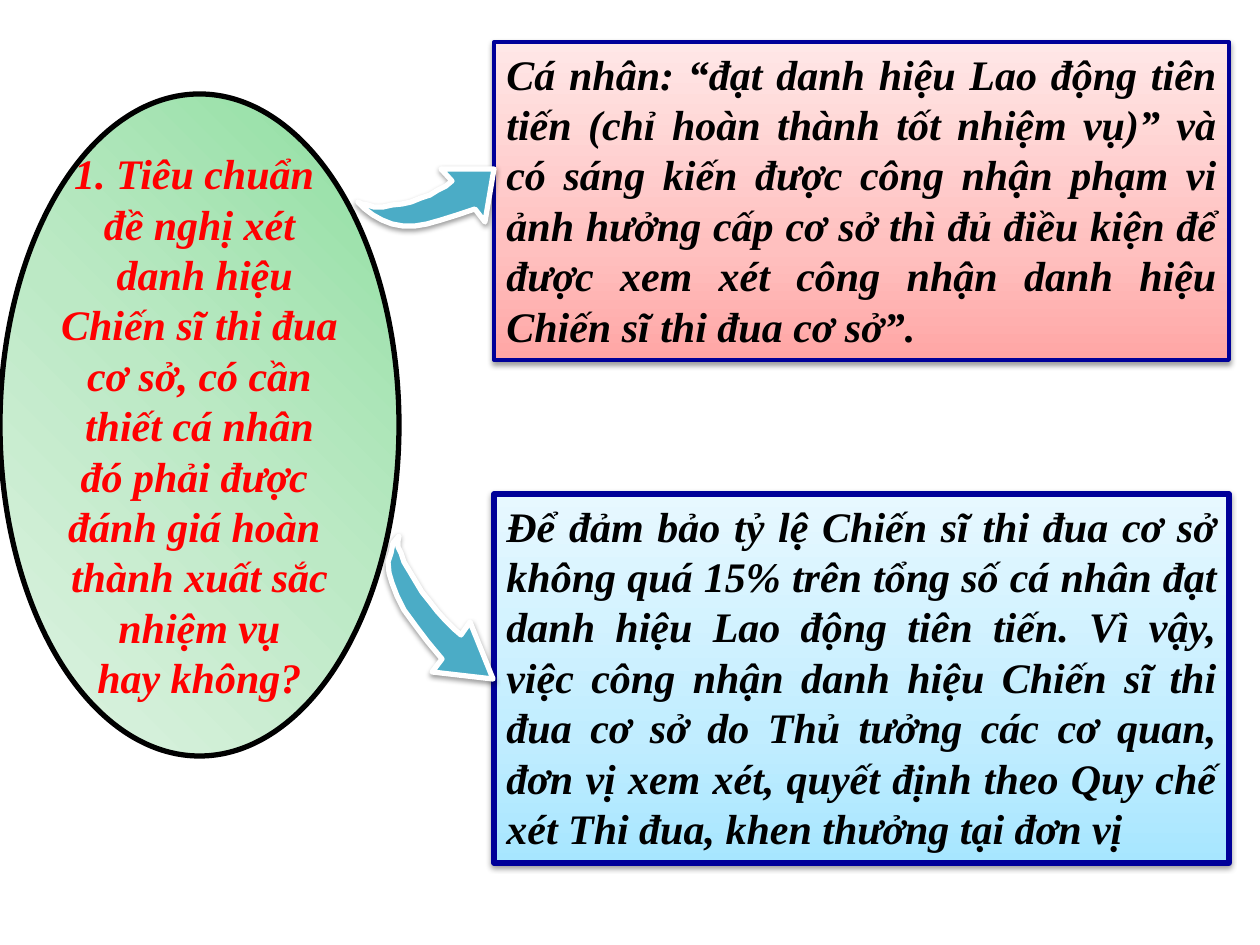
"""Build the slide on the criteria for the grassroots emulation title."""
from lxml import etree
from pptx import Presentation
from pptx.dml.color import RGBColor
from pptx.enum.shapes import MSO_SHAPE
from pptx.enum.text import MSO_ANCHOR, MSO_AUTO_SIZE, PP_ALIGN
from pptx.oxml.ns import qn
from pptx.util import Inches, Pt

PX = 914400 / 126
FONT = "Times New Roman"
OVAL, RECT = MSO_SHAPE.OVAL, MSO_SHAPE.RECTANGLE
TOP, MIDDLE = MSO_ANCHOR.TOP, MSO_ANCHOR.MIDDLE
CENTER, JUSTIFY = PP_ALIGN.CENTER, PP_ALIGN.JUSTIFY
RESIZE = MSO_AUTO_SIZE.SHAPE_TO_FIT_TEXT

BLACK = RGBColor(0x00, 0x00, 0x00)
WHITE = RGBColor(0xFF, 0xFF, 0xFF)
RED = RGBColor(0xFF, 0x00, 0x00)
NAVY = RGBColor(0x00, 0x00, 0x99)
TEAL = RGBColor(0x4B, 0xAC, 0xC6)
GREENS = [(0, RGBColor(0x8F, 0xDE, 0xA0)), (50, RGBColor(0xBC, 0xE9, 0xC5)),
          (100, RGBColor(0xDF, 0xF3, 0xE3))]
PINKS = [(0, RGBColor(0xFF, 0xA6, 0xA5)), (35, RGBColor(0xFF, 0xC0, 0xBF)),
         (100, RGBColor(0xFF, 0xE7, 0xE7))]
BLUES = [(0, RGBColor(0xA7, 0xE6, 0xFF)), (35, RGBColor(0xC1, 0xED, 0xFF)),
         (100, RGBColor(0xE7, 0xF8, 0xFF))]

QUESTION = ["1. Tiêu chuẩn ", "đề nghị xét", " danh hiệu", " Chiến sĩ thi đua ",
            "cơ sở, có cần", " thiết cá nhân ", "đó phải được ",
            "đánh giá hoàn ", "thành xuất sắc", " nhiệm vụ ", "hay không?"]
PERSONAL = ("Cá nhân: “đạt danh hiệu Lao động tiên tiến (chỉ hoàn thành tốt "
            "nhiệm vụ)” và có sáng kiến được công nhận phạm vi ảnh hưởng cấp "
            "cơ sở thì đủ điều kiện để được xem xét công nhận danh hiệu "
            "Chiến sĩ thi đua cơ sở”.")
RATIO = ("Để đảm bảo tỷ lệ Chiến sĩ thi đua cơ sở không quá 15% trên tổng số "
         "cá nhân đạt danh hiệu Lao động tiên tiến. Vì vậy, việc công nhận "
         "danh hiệu Chiến sĩ thi đua cơ sở do Thủ tưởng các cơ quan, đơn vị "
         "xem xét, quyết định theo Quy chế xét Thi đua, khen thưởng tại đơn vị")

UPPER_ARROW = [
    (358, 202), (365, 209), (373, 215), (382, 220), (392, 224), (403, 226),
    (415, 226), (427, 224), (441, 220), (457, 215), (475, 209), (485, 222),
    (494, 169), (441, 169), (452, 181), (446, 186), (438, 190), (430, 195),
    (421, 198), (411, 202), (402, 204), (392, 205), (383, 207), (374, 207),
    (368, 205), (362, 204)]
LOWER_ARROW = [
    (399, 536), (393, 543), (391, 553), (388, 562), (389, 573), (392, 583),
    (397, 596), (404, 610), (415, 625), (427, 641), (442, 659), (432, 672),
    (493, 679), (470, 622), (461, 635), (454, 629), (445, 620), (437, 611),
    (430, 602), (422, 592), (416, 582), (410, 572), (404, 562), (401, 553),
    (398, 547), (398, 541)]


def px(n):
    """Turn pixels into EMU."""
    return round(n * PX)


def set_gradient(sp, stops, angle):
    """Fill a shape with gradient stops at a clockwise angle."""
    sp.fill.gradient()
    sp.fill.gradient_angle = 360 - angle
    gs_lst = next(sp._element.spPr.iter(qn("a:gsLst")))
    for gs in list(gs_lst):
        gs_lst.remove(gs)
    for pos, color in stops:
        gs = etree.SubElement(gs_lst, qn("a:gs"), pos=str(pos * 1000))
        etree.SubElement(gs, qn("a:srgbClr"), val=str(color))


def set_line(sp, color, width):
    """Outline a shape and drop its theme shadow."""
    sp.line.color.rgb = color
    sp.line.width = Pt(width)
    sp.shadow.inherit = False


def add_shadow(sp):
    """Give a shape a soft shadow below it."""
    effects = sp._element.spPr.find(qn("a:effectLst"))
    shadow = etree.SubElement(effects, qn("a:outerShdw"), blurRad=str(Pt(3.1)),
                              dist=str(Pt(1.6)), dir="5400000", rotWithShape="0")
    color = etree.SubElement(shadow, qn("a:srgbClr"), val=str(BLACK))
    etree.SubElement(color, qn("a:alpha"), val="38000")


def add_lines(sp, lines, color, align):
    """Write lines of bold italic text in one paragraph."""
    p = sp.text_frame.paragraphs[0]
    p.alignment = align
    for i, line in enumerate(lines):
        if i:
            p.add_line_break()
        r = p.add_run()
        r.text = line
        r.font.name = FONT
        r.font.size = Pt(24)
        r.font.bold = r.font.italic = True
        r.font.color.rgb = color
    for br in p._p.findall(qn("a:br")):
        etree.SubElement(br, qn("a:rPr"), sz="2400")


def add_question(s):
    """Add the oval that asks the question."""
    sp = s.shapes.add_shape(OVAL, 0, px(94), px(399), px(662))
    set_gradient(sp, GREENS, 135)
    set_line(sp, BLACK, 3)
    sp.text_frame.word_wrap = False
    sp.text_frame.vertical_anchor = MIDDLE
    add_lines(sp, QUESTION, RED, CENTER)


def add_answer(s, top, height, stops, line_width, text):
    """Add one answer box on the right."""
    sp = s.shapes.add_shape(RECT, px(494), px(top), px(735), px(height))
    set_gradient(sp, stops, 270)
    set_line(sp, NAVY, line_width)
    add_shadow(sp)
    tf = sp.text_frame
    tf.word_wrap = True
    tf.auto_size = RESIZE
    tf.vertical_anchor = TOP
    add_lines(sp, [text], BLACK, JUSTIFY)


def add_arrow(s, points):
    """Add a curved block arrow through the points."""
    builder = s.shapes.build_freeform(*points[0], scale=PX)
    builder.add_line_segments(points[1:], close=True)
    sp = builder.convert_to_shape()
    sp.fill.solid()
    sp.fill.fore_color.rgb = TEAL
    set_line(sp, WHITE, 3)
    add_shadow(sp)


def main():
    """Build and save the slide."""
    prs = Presentation()
    prs.slide_width, prs.slide_height = Inches(10), Inches(7.5)
    s = prs.slides.add_slide(prs.slide_layouts[6])
    add_question(s)
    add_answer(s, 42, 318, PINKS, 2.25, PERSONAL)
    add_answer(s, 494, 369, BLUES, 3, RATIO)
    for points in (UPPER_ARROW, LOWER_ARROW):
        add_arrow(s, points)
    prs.save("out.pptx")


if __name__ == "__main__":
    main()
